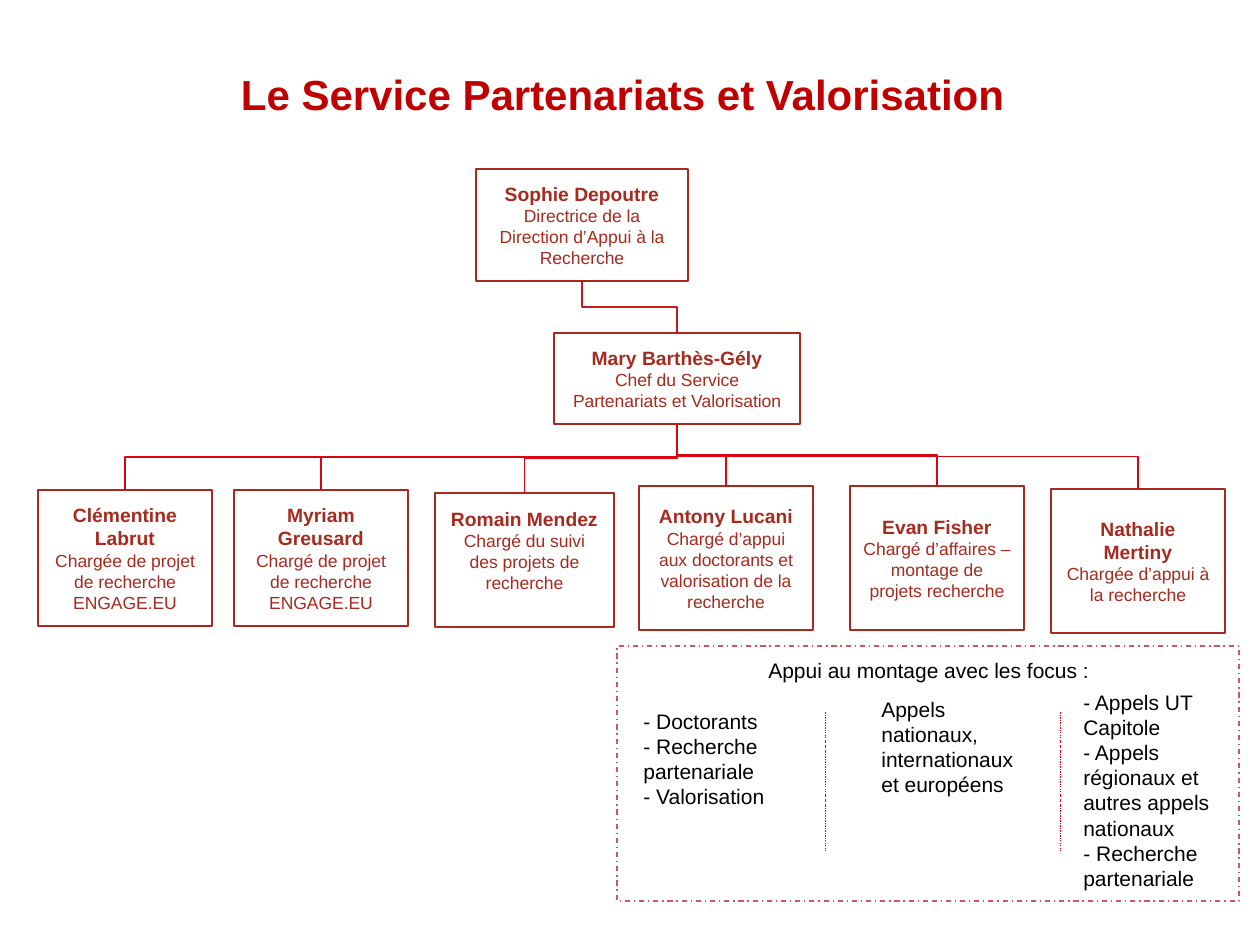
"""Organisation chart of the Service Partenariats et Valorisation."""
from lxml import etree
from pptx import Presentation, util as u
from pptx.dml.color import RGBColor
from pptx.enum import dml, shapes, text
from pptx.oxml.ns import qn

SCALE = u.Inches(1) / 126


def px(n):
    return u.Emu(round(n * SCALE))


def rgb(value):
    return RGBColor.from_string(value)


class Chart:
    font, brown, red, crimson, black = "Arial", "A72A1E", "DB0411", "BE1B25", "000000"
    title_red, rose = "C00000", "CB585E"

    def __init__(self, s):
        self.s = s

    def fill_text(self, tf, lines, align=text.PP_ALIGN.LEFT):
        tf.word_wrap = True
        for i, (words, size, color, bold) in enumerate(lines):
            p = tf.paragraphs[0] if i == 0 else tf.add_paragraph()
            p.add_run().text = words
            p.alignment = align
            p.font.name, p.font.size, p.font.bold = self.font, u.Pt(size), bold
            p.font.color.rgb = rgb(color)

    def stroke(self, sp, color, width, dash=None):
        sp.line.color.rgb = rgb(color)
        sp.line.width = u.Pt(width)
        if dash:
            sp.line.dash_style = dash

    def title(self, box, words):
        tf = self.s.shapes.add_textbox(*map(px, box)).text_frame
        tf.vertical_anchor = text.MSO_ANCHOR.BOTTOM
        self.fill_text(tf, [(words, 24, self.title_red, True)], text.PP_ALIGN.CENTER)

    def label(self, box, *lines):
        tf = self.s.shapes.add_textbox(*map(px, box)).text_frame
        self.fill_text(tf, [(words, 12, self.black, False) for words in lines])

    def rect(self, box, color, width, dash=None):
        sp = self.s.shapes.add_shape(shapes.MSO_SHAPE.RECTANGLE, *map(px, box))
        sp.shadow.inherit = False
        sp.fill.background()
        self.stroke(sp, color, width, dash)
        return sp

    def person(self, box, name, *roles, bottom=13):
        sp = self.rect(box, self.brown, 1.5)
        tf = sp.text_frame
        tf.margin_left = tf.margin_right = tf.margin_top = px(13)
        tf.margin_bottom = px(bottom)
        tf.vertical_anchor = text.MSO_ANCHOR.MIDDLE
        lines = [(name, 11, self.brown, True)]
        lines += [(role, 10, self.brown, False) for role in roles]
        self.fill_text(tf, lines, text.PP_ALIGN.CENTER)
        return sp

    def connector(self, kind, ends, color, width, dash=None):
        sp = self.s.shapes.add_connector(kind, *ends)
        self.stroke(sp, color, width, dash)
        etree.SubElement(sp._element.spPr, qn("a:effectLst"))
        return sp

    def divider(self, x, top, bottom):
        self.connector(shapes.MSO_CONNECTOR.STRAIGHT, map(px, (x, top, x, bottom)),
                       self.red, 0.25, dml.MSO_LINE.DASH_DOT)

    def branch(self, boss, member, color, width):
        x1, y1 = boss.left + boss.width // 2, boss.top + boss.height
        x2, y2 = member.left + member.width // 2, member.top
        sp = self.connector(shapes.MSO_CONNECTOR.ELBOW, (x1, y1, x2, y2), color, width)
        sp.begin_connect(boss, 2)
        sp.end_connect(member, 0)
        sp.width, sp.height = y2 - y1, abs(x2 - x1)
        sp.left = (x1 + x2 - sp.width) // 2
        sp.top = (y1 + y2 - sp.height) // 2
        xfrm = sp._element.spPr.find(qn("a:xfrm"))
        rightward = x2 > x1
        xfrm.set("rot", "16200000" if rightward else "5400000")
        xfrm.set("flipH", "1" if rightward else "0")
        xfrm.set("flipV", "0")


def main():
    prs = Presentation()
    prs.slide_width, prs.slide_height = u.Inches(10), u.Inches(7.5)
    c = Chart(prs.slides.add_slide(prs.slide_layouts[6]))

    c.title((35, 62, 1187, 63), "Le Service Partenariats et Valorisation ")
    director = c.person((476, 169, 212, 112), "Sophie Depoutre",
                        "Directrice de la Direction d’Appui à la Recherche")
    head = c.person((554, 333, 246, 91), "Mary Barthès-Gély",
                    "Chef du Service Partenariats et Valorisation")
    c.branch(director, head, c.crimson, 1.5)

    team = [
        ((38, 490, 174, 136), 13, "Clémentine Labrut",
         "Chargée de projet de recherche", "ENGAGE.EU"),
        ((234, 490, 174, 136), 13, "Myriam Greusard",
         "Chargé de projet de recherche", "ENGAGE.EU"),
        ((435, 493, 179, 134), 33, "Romain Mendez",
         "Chargé du suivi des projets de recherche"),
        ((639, 486, 174, 144), 13, "Antony Lucani",
         "Chargé d’appui aux doctorants et valorisation de la recherche"),
        ((850, 486, 174, 144), 13, "Evan Fisher",
         "Chargé d’affaires – montage de projets recherche"),
        ((1051, 489, 174, 144), 13, "Nathalie Mertiny",
         "Chargée d’appui à la recherche"),
    ]
    for box, bottom, *lines in team:
        c.branch(head, c.person(box, *lines, bottom=bottom), c.red, 0.75)

    c.rect((617, 646, 622, 255), c.rose, 0.75, dml.MSO_LINE.DASH_DOT)
    c.label((756, 651, 504, 38), "Appui au montage avec les focus :")
    c.label((631, 702, 182, 115), "- Doctorants", "- Recherche partenariale",
            "- Valorisation")
    c.label((869, 690, 164, 115), "Appels nationaux, internationaux et européens")
    c.label((1071, 683, 189, 267), "- Appels UT Capitole",
            "- Appels régionaux et autres appels nationaux",
            "- Recherche partenariale")
    for x in (825, 1060):
        c.divider(x, 712, 850)

    prs.save("out.pptx")


if __name__ == "__main__":
    main()
